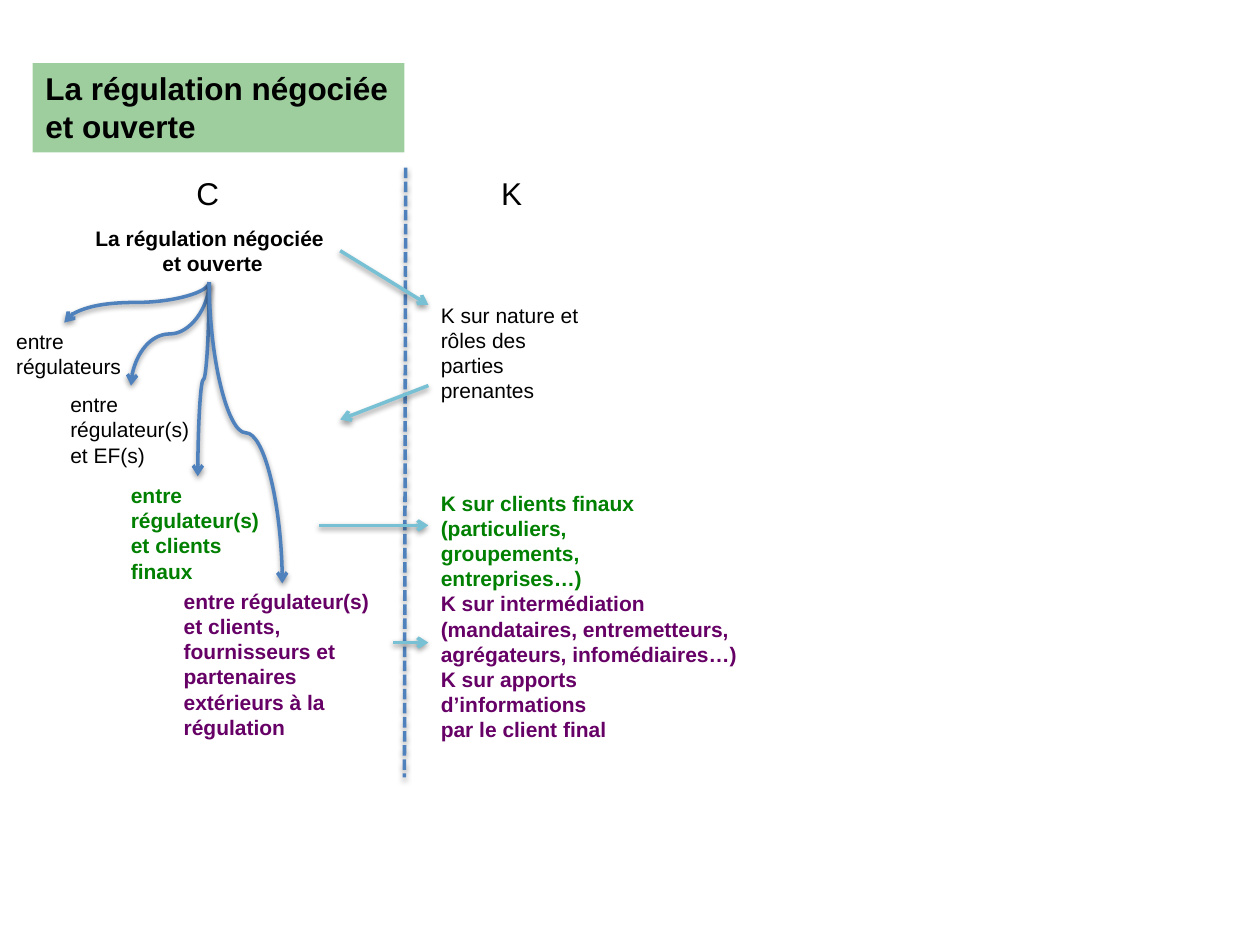
from pptx import Presentation
from pptx.dml.color import RGBColor
from pptx.enum.dml import MSO_LINE
from pptx.enum.shapes import MSO_CONNECTOR
from pptx.enum.text import MSO_ANCHOR, MSO_AUTO_SIZE, PP_ALIGN
from pptx.oxml import parse_xml
from pptx.oxml.ns import nsdecls, qn
from pptx.util import Inches, Pt

BLACK, GREEN, PURPLE = "000000", "008000", "660066"
BLUE, TEAL = "4F81BD", "78C1D4"
SHADOW = (
    f'<a:effectLst {nsdecls("a")}><a:outerShdw blurRad="40000" dist="20000" '
    'dir="5400000" rotWithShape="0"><a:srgbClr val="000000">'
    '<a:alpha val="38000"/></a:srgbClr></a:outerShdw></a:effectLst>'
)


def rgb(code):
    return RGBColor.from_string(code)


class Board:
    """Holds the style and the current slide."""

    font = "Arial"
    width = 2

    def __init__(self, deck):
        self.slide = deck.slides.add_slide(deck.slide_layouts[5])

    def label(self, shape, groups, size, bold, align):
        """Fill a shape with (colour, lines) groups, one paragraph a line."""
        frame = shape.text_frame
        rows = [(color, line) for color, lines in groups for line in lines]
        frame.text = "\n".join(line for _, line in rows)
        for para, (color, _) in zip(frame.paragraphs, rows):
            para.alignment = align
            para.font.name = self.font
            para.font.size = Pt(size)
            para.font.bold = bold
            para.font.color.rgb = rgb(color)

    def title(self, box, lines):
        shape = self.slide.shapes.title
        shape.left, shape.top, shape.width, shape.height = map(Inches, box)
        shape.fill.solid()
        shape.fill.fore_color.rgb = rgb(GREEN)
        tint = shape._element.spPr.find(".//" + qn("a:srgbClr"))
        tint.append(parse_xml(f'<a:alpha {nsdecls("a")} val="38000"/>'))
        self.label(shape, [(BLACK, lines)], 18, True, PP_ALIGN.LEFT)
        shape.text_frame.auto_size = MSO_AUTO_SIZE.NONE
        shape.text_frame.vertical_anchor = MSO_ANCHOR.TOP

    def text(self, box, *groups, size=12, bold=False, wrap=False,
             align=PP_ALIGN.LEFT):
        shape = self.slide.shapes.add_textbox(*map(Inches, box))
        self.label(shape, groups, size, bold, align)
        shape.text_frame.word_wrap = wrap
        shape.text_frame.auto_size = MSO_AUTO_SIZE.SHAPE_TO_FIT_TEXT
        return shape

    def line(self, start, end, color, kind=MSO_CONNECTOR.STRAIGHT, head=True):
        link = self.slide.shapes.add_connector(
            kind, *map(Inches, (*start, *end)))
        link.line.color.rgb = rgb(color)
        link.line.width = Pt(self.width)
        props = link._element.spPr
        if head:
            props.get_or_add_ln().append(
                parse_xml(f'<a:tailEnd {nsdecls("a")} type="arrow"/>'))
        props.append(parse_xml(SHADOW))
        return link

    def curve(self, start, end):
        """Draw an S-curve that leaves and arrives vertically."""
        (x1, y1), (x2, y2) = start, end
        midx, midy = (x1 + x2) / 2, (y1 + y2) / 2
        long, wide = (y2 - y1) / 2, abs(x2 - x1) / 2
        # The box is laid on its side, then turned about its centre.
        turn, side = (270, -1) if x2 > x1 else (90, 1)
        link = self.line((midx - side * long, midy - wide),
                         (midx + side * long, midy + wide),
                         BLUE, MSO_CONNECTOR.CURVE)
        link._element.spPr.find(qn("a:xfrm")).set("rot", str(turn * 60000))


def main():
    deck = Presentation()
    deck.slide_width, deck.slide_height = Inches(10), Inches(7.5)
    board = Board(deck)
    board.title((0.26, 0.5, 2.95, 0.71),
                ["La régulation négociée", "et ouverte"])

    for left, width, name in ((1.46, 0.38, "C"), (3.88, 0.37, "K")):
        board.text((left, 1.33, width, 0.4), (BLACK, [name]), size=18)
    split = board.line((3.22, 1.33), (3.21, 6.17), BLUE, head=False)
    split.line.dash_style = MSO_LINE.SQUARE_DOT

    root = board.text((0.63, 1.74, 2.07, 0.5),
                      (BLACK, ["La régulation négociée", " et ouverte"]),
                      bold=True, wrap=True, align=PP_ALIGN.CENTER)
    board.text((0.03, 2.56, 1.04, 0.51), (BLACK, ["entre", "régulateurs"]))
    board.text((0.46, 3.06, 1.16, 0.71),
               (BLACK, ["entre", "régulateur(s)", "et EF(s)"]))
    board.text((0.94, 3.78, 1.24, 0.91),
               (GREEN, ["entre", "régulateur(s)", "et clients", "finaux"]),
               bold=True)
    board.text((1.36, 4.62, 1.76, 1.31),
               (PURPLE, ["entre régulateur(s) et clients, fournisseurs et "
                         "partenaires extérieurs à la régulation"]),
               bold=True, wrap=True)
    for end in ((0.51, 2.56), (1.04, 3.06), (1.57, 3.78), (2.24, 4.63)):
        board.curve((1.66, 2.24), end)

    board.text((3.4, 2.35, 1.39, 0.91),
               (BLACK, ["K sur nature et rôles des parties prenantes"]),
               wrap=True)
    board.text((3.4, 3.84, 2.58, 2.12),
               (GREEN, ["K sur clients finaux", "(particuliers,",
                        "groupements,", "entreprises…)"]),
               (PURPLE, ["K sur intermédiation",
                         "(mandataires, entremetteurs,",
                         "agrégateurs, infomédiaires…)", "K sur apports",
                         "d’informations", "par le client final"]),
               bold=True)

    board.line((2.7, 1.99), (3.4, 2.42), TEAL).begin_connect(root, 3)
    for start, end in (((3.4, 3.06), (2.7, 3.33)),
                       ((2.53, 4.17), (3.4, 4.17)),
                       ((3.12, 5.1), (3.4, 5.1))):
        board.line(start, end, TEAL)

    deck.save("out.pptx")


if __name__ == "__main__":
    main()
